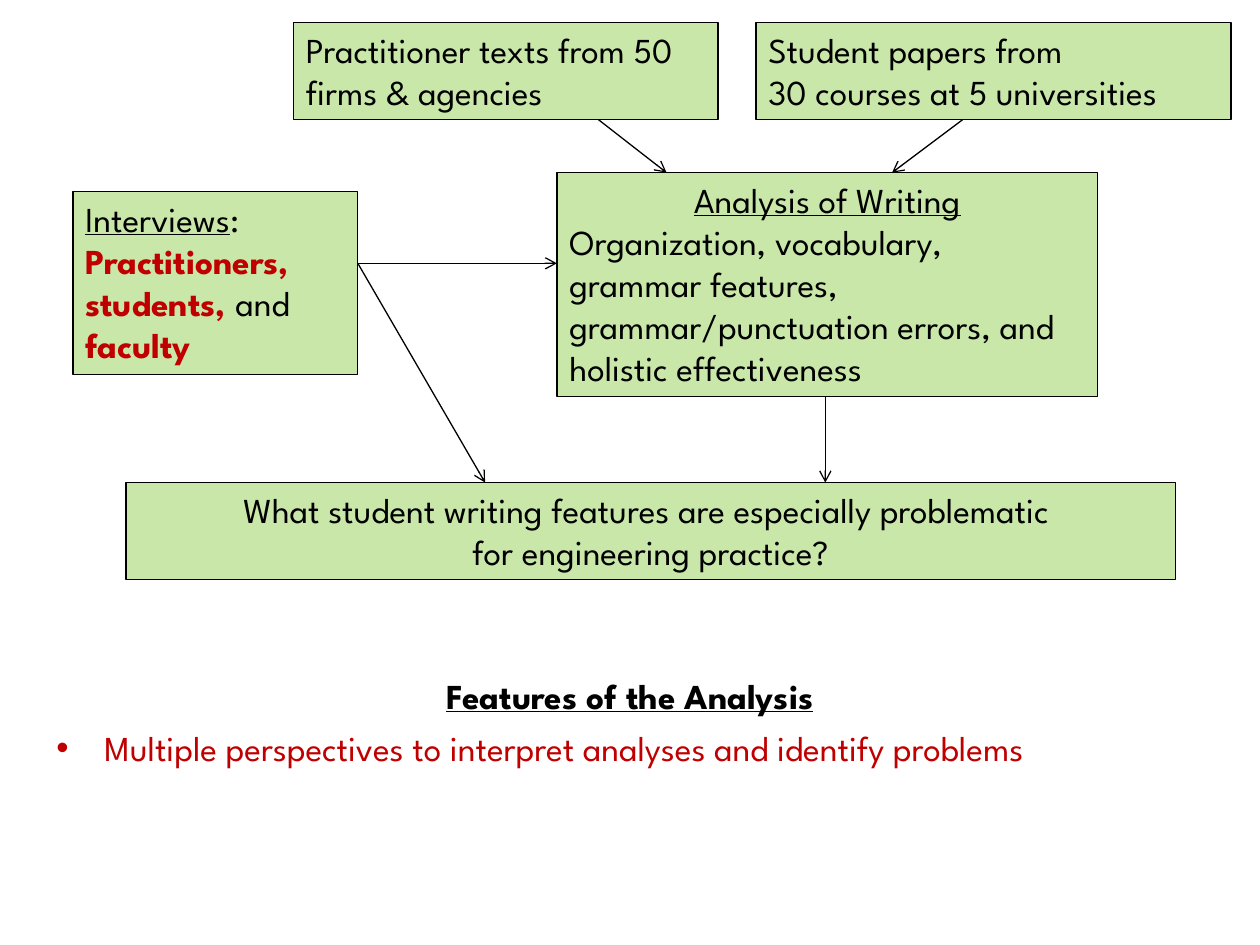
from lxml import etree
from pptx import Presentation
from pptx.dml.color import RGBColor
from pptx.enum.shapes import MSO_CONNECTOR, MSO_SHAPE
from pptx.enum.text import MSO_ANCHOR, PP_ALIGN
from pptx.oxml.ns import qn
from pptx.util import Inches, Pt

COLORS = {"black": "000000", "red": "C00000", "green": "92D050"}
FONT = "League Spartan"


def rgb(name):
    return RGBColor.from_string(COLORS[name])


def format_run(r, color="black", bold=False, underline=False):
    f = r.font
    f.name, f.size = FONT, Pt(20)
    f.color.rgb = rgb(color)
    f.bold, f.underline = bold, underline


def write_paragraphs(tf, paragraphs):
    """Each paragraph is (alignment, [(text, run format), ...])."""
    tf.vertical_anchor = MSO_ANCHOR.TOP
    for i, (align, runs) in enumerate(paragraphs):
        p = tf.add_paragraph() if i else tf.paragraphs[0]
        p.alignment = align
        for text, style in runs:
            r = p.add_run()
            r.text = text
            format_run(r, **style)


def add_box(s, x, y, w, h, paragraphs, wrap=True):
    sp = s.shapes.add_shape(MSO_SHAPE.RECTANGLE, Inches(x), Inches(y), Inches(w), Inches(h))
    sp.shadow.inherit = False
    sp.fill.solid()
    sp.fill.fore_color.rgb = rgb("green")
    color = sp.fill._xPr.find(".//" + qn("a:srgbClr"))
    etree.SubElement(color, qn("a:alpha"), val="49000")
    sp.line.color.rgb = rgb("black")
    sp.line.width = Pt(0.75)
    sp.text_frame.word_wrap = wrap
    write_paragraphs(sp.text_frame, paragraphs)


def add_arrow(s, x1, y1, x2, y2):
    c = s.shapes.add_connector(MSO_CONNECTOR.STRAIGHT, Inches(x1), Inches(y1), Inches(x2), Inches(y2))
    c.line.color.rgb = rgb("black")
    c.line.width = Pt(0.75)
    etree.SubElement(c.line._get_or_add_ln(), qn("a:tailEnd"), type="arrow")
    etree.SubElement(c._element.spPr, qn("a:effectLst"))


def add_features(s, x, y, w, h, heading, bullet):
    tf = s.shapes.add_textbox(Inches(x), Inches(y), Inches(w), Inches(h)).text_frame
    tf.word_wrap = True
    write_paragraphs(tf, [
        (PP_ALIGN.CENTER, [(heading, {"bold": True, "underline": True})]),
        (PP_ALIGN.LEFT, [(bullet, {"color": "red"})]),
    ])
    for p in tf.paragraphs:
        p.space_after = Pt(6)
    # Hanging bullet
    pPr = tf.paragraphs[1]._p.get_or_add_pPr()
    pPr.set("marL", str(Inches(0.38)))
    pPr.set("indent", str(-Inches(0.38)))
    etree.SubElement(pPr, qn("a:buFont"), typeface="Arial")
    etree.SubElement(pPr, qn("a:buChar"), char="•")


def main():
    prs = Presentation()
    prs.slide_width, prs.slide_height = Inches(10), Inches(7.5)
    s = prs.slides.add_slide(prs.slide_layouts[6])
    left, center = PP_ALIGN.LEFT, PP_ALIGN.CENTER
    key = {"color": "red", "bold": True}
    under = {"underline": True}

    # Features of the analysis
    add_features(s, 0.35, 5.3, 9.3, 1.19, "Features of the Analysis",
                 "Multiple perspectives to interpret analyses and identify problems")

    # Sources of texts
    add_box(s, 2.33, 0.18, 3.37, 0.77, [
        (left, [("Practitioner texts from 50 firms & agencies", {})])])
    add_box(s, 6, 0.18, 3.77, 0.77, [
        (left, [("Student papers from", {})]),
        (left, [("30 courses at 5 universities", {})])], wrap=False)

    # Analysis, research question and interviews
    add_box(s, 4.42, 1.37, 4.29, 1.78, [
        (center, [("Analysis of Writing", under)]),
        (left, [("Organization, vocabulary,", {})]),
        (left, [("grammar features, grammar/punctuation errors, and "
                 "holistic effectiveness", {})])])
    add_box(s, 1, 3.83, 8.33, 0.77, [
        (center, [("What student writing features are especially problematic ", {})]),
        (center, [("for engineering practice?", {})])])
    add_box(s, 0.58, 1.52, 2.26, 1.45, [
        (left, [("Interviews", under), (":", {})]),
        (left, [("Practitioners,", key)]),
        (left, [("students, ", key), ("and", {})]),
        (left, [("faculty", key)])])

    # Arrows run from box edge to box edge
    source_bottom, question_top = 0.95, 3.83
    analysis_left, analysis_top, analysis_bottom = 4.42, 1.37, 3.15
    interviews = (2.84, 2.09)
    for start, end in [((4.75, source_bottom), (5.29, analysis_top)),
                       ((7.64, source_bottom), (7.08, analysis_top)),
                       ((6.55, analysis_bottom), (6.55, question_top)),
                       (interviews, (analysis_left, 2.09)),
                       (interviews, (3.85, question_top))]:
        add_arrow(s, *start, *end)

    prs.save("out.pptx")


main()
